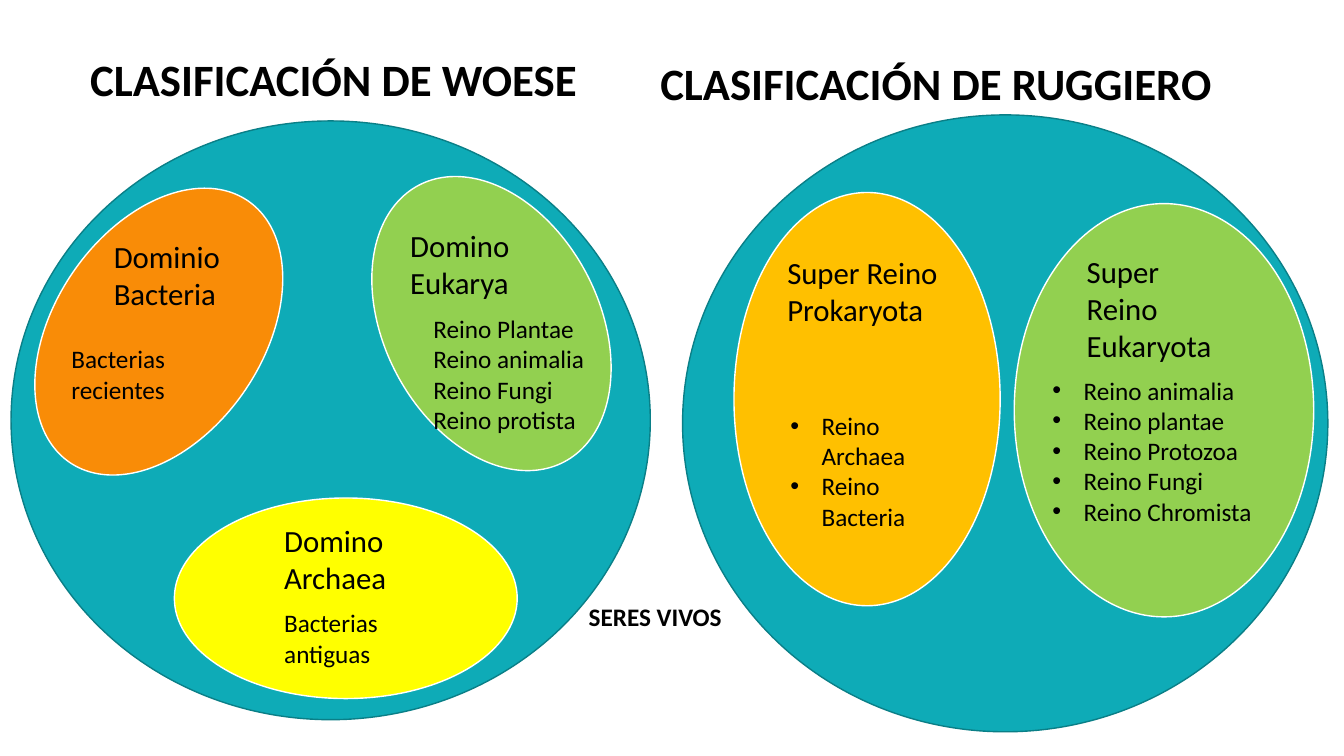
"""Build a slide comparing the Woese and Ruggiero classifications of living things."""
from dataclasses import dataclass

from lxml import etree
from pptx import Presentation
from pptx import util as u
from pptx.dml.color import RGBColor
from pptx.enum import shapes, text
from pptx.oxml import ns

PX = 9144
FONT = "Calibri"
INDENT = 31
COLORS = {
    "teal": "0EABB7",
    "dark_teal": "0A7F87",
    "orange": "F98C07",
    "green": "92D050",
    "yellow": "FFFF00",
    "gold": "FFC000",
    "white": "FFFFFF",
    "black": "000000",
}


@dataclass(frozen=True)
class Oval:
    x: int
    y: int
    w: int
    h: int
    fill: str
    line: str = "white"
    rotation: float = 0


@dataclass(frozen=True)
class Label:
    x: int
    y: int
    w: int
    h: int
    lines: tuple[str, ...]
    size: int = 18
    bold: bool = False
    bulleted: bool = False
    centered: bool = False
    spacing: float = 1.0
    grows: bool = True


OVALS = (
    Oval(11, 120, 634, 594, "teal", "dark_teal"),
    Oval(54, 172, 207, 314, "orange", rotation=34.2),
    Oval(381, 166, 213, 310, "green", rotation=332.3),
    Oval(173, 494, 340, 199, "yellow"),
    Oval(677, 114, 640, 612, "teal", "dark_teal"),
    Oval(728, 191, 264, 410, "gold"),
    Oval(1006, 202, 297, 410, "green"),
)

HEADINGS = (
    Label(17, 52, 628, 83, ("CLASIFICACIÓN DE WOESE",), 32, bold=True,
          centered=True, spacing=0.9, grows=False),
    Label(645, 50, 678, 64, ("CLASIFICACIÓN DE RUGGIERO",), 32, bold=True),
    Label(574, 592, 192, 40, ("SERES VIVOS",), bold=True),
)

GROUP_NAMES = (
    Label(103, 231, 145, 84, ("Dominio", "Bacteria"), 22),
    Label(272, 513, 172, 84, ("Domino", "Archaea"), 22),
    Label(397, 220, 146, 84, ("Domino", "Eukarya"), 22),
    Label(771, 247, 188, 121, ("Super Reino", "Prokaryota"), 22),
    Label(1068, 246, 158, 121, ("Super Reino Eukaryota",), 22),
)

MEMBERS = (
    Label(61, 336, 148, 71, ("Bacterias", "recientes")),
    Label(272, 598, 148, 71, ("Bacterias", "antiguas")),
    Label(420, 306, 191, 131,
          ("Reino Plantae", "Reino animalia", "Reino Fungi", "Reino protista")),
    Label(774, 402, 181, 131, ("Reino Archaea", "Reino Bacteria"), bulleted=True),
    Label(1034, 367, 239, 162,
          ("Reino animalia", "Reino plantae", "Reino Protozoa", "Reino Fungi",
           "Reino Chromista"), bulleted=True),
)


def px(n: int) -> u.Emu:
    """Convert layout px to EMU."""
    return u.Emu(n * PX)


def color(name: str) -> RGBColor:
    """Look up a named colour."""
    return RGBColor.from_string(COLORS[name])


def draw_oval(s, oval: Oval) -> None:
    """Draw one filled and outlined ellipse."""
    sp = s.shapes.add_shape(shapes.MSO_SHAPE.OVAL, px(oval.x), px(oval.y),
                            px(oval.w), px(oval.h))
    sp.shadow.inherit = False
    sp.rotation = oval.rotation
    sp.fill.solid()
    sp.fill.fore_color.rgb = color(oval.fill)
    sp.line.color.rgb = color(oval.line)
    sp.line.width = u.Pt(1)


def add_bullet(p) -> None:
    """Give a paragraph a round bullet with a hanging indent."""
    props = p._p.get_or_add_pPr()
    props.set("marL", str(px(INDENT)))
    props.set("indent", str(px(-INDENT)))
    etree.SubElement(props, ns.qn("a:buFont")).set("typeface", "Arial")
    etree.SubElement(props, ns.qn("a:buChar")).set("char", "•")


def draw_label(s, label: Label) -> None:
    """Draw one text box with a paragraph for each line."""
    sp = s.shapes.add_textbox(px(label.x), px(label.y), px(label.w), px(label.h))
    tf = sp.text_frame
    tf.word_wrap = True
    tf.auto_size = (text.MSO_AUTO_SIZE.SHAPE_TO_FIT_TEXT if label.grows
                    else text.MSO_AUTO_SIZE.NONE)
    for i, line in enumerate(label.lines):
        p = tf.add_paragraph() if i else tf.paragraphs[0]
        p.alignment = text.PP_ALIGN.CENTER if label.centered else text.PP_ALIGN.LEFT
        p.line_spacing = label.spacing
        if label.bulleted:
            add_bullet(p)
        r = p.add_run()
        r.text = line
        r.font.name = FONT
        r.font.size = u.Pt(label.size)
        r.font.bold = label.bold
        r.font.color.rgb = color("black")


def main() -> None:
    """Build and save the presentation."""
    prs = Presentation()
    prs.slide_width, prs.slide_height = px(1333), px(750)
    s = prs.slides.add_slide(prs.slide_layouts[6])
    for oval in OVALS:
        draw_oval(s, oval)
    for label in HEADINGS + GROUP_NAMES + MEMBERS:
        draw_label(s, label)
    prs.save("out.pptx")


if __name__ == "__main__":
    main()
